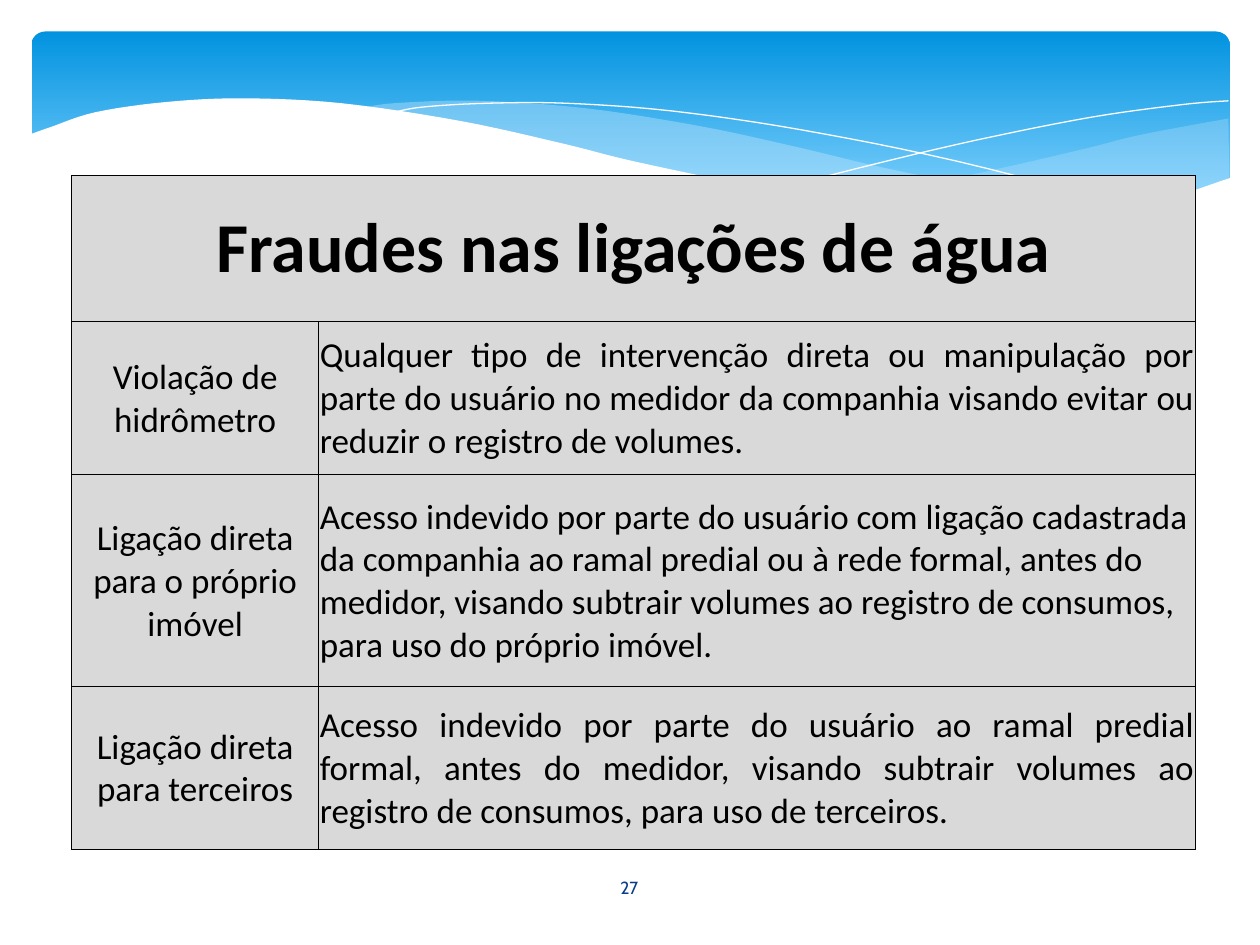
"""Build the slide on fraud in water connections."""
from dataclasses import dataclass

import pptx
import pptx.dml.color
import pptx.enum.shapes
import pptx.enum.text
import pptx.oxml
import pptx.oxml.ns
import pptx.util

Pt = pptx.util.Pt
ALIGN = pptx.enum.text.PP_ALIGN
MIDDLE = pptx.enum.text.MSO_ANCHOR.MIDDLE


@dataclass(frozen=True)
class Theme:
    """Colours, fonts and type sizes."""
    banner_top: str = "0293E0"
    banner_bottom: str = "83D3FE"
    wave: str = "C6E7FC"
    white: str = "FFFFFF"
    cell: str = "D9D9D9"
    ink: str = "000000"
    number: str = "073E87"
    body_font: str = "Calibri"
    number_font: str = "Cabin"
    title_size: int = 40
    body_size: int = 20
    number_size: int = 10


THEME = Theme()

RIGHT_WAVE = [
    [(702, 67.7), (652, 77), (620, 85), (561, 98.6), (508.5, 109.4), (476, 115.2)],
    [(476, 115.2), (537, 122), (593, 124), (641, 120), (678, 111), (702.5, 101.5)],
]
MIDDLE_WAVE = [
    [(643, 120.2), (580, 110.9), (508, 96.5), (453, 83.5), (399.5, 72),
     (334.8, 61.9), (273.6, 57.6), (225.4, 59), (206, 61.9)],
    [(206, 61.9), (246, 67.7), (306.7, 79.2), (381.6, 97.2), (444.9, 110.2),
     (500.4, 118.8), (547.9, 123.1), (589, 124.6), (624.2, 122.4), (643, 120.2)],
]
FALLING_LINE = [[(222.5, 64.8), (241.2, 61.2), (278.6, 59), (323.3, 59),
                 (383.8, 63.4), (457.9, 74.2), (547.2, 92.2), (653, 119.5)]]
RISING_LINE = [[(441.4, 108.7), (500.4, 93.6), (558.7, 79.9), (623.5, 67),
                (675.4, 59.8), (702, 57.6)]]
WHITE_WAVE = [
    [(703.4, 101.5), (662.4, 114.5), (612, 122.4), (559, 123.1), (495.4, 118.8),
     (434.2, 107.3), (362.2, 92.2), (321.8, 82.1), (262.8, 69.1), (195.1, 59),
     (139, 56.2), (95, 58.3), (54.7, 64.1), (28.8, 72.7), (16.6, 77)],
    [(16.6, 161.3), (703.4, 161.3)],
]

TITLE = "Fraudes nas ligações de água"
FRAUDS = [
    ("Violação de hidrômetro",
     "Qualquer tipo de intervenção direta ou manipulação por parte do usuário no "
     "medidor da companhia visando evitar ou reduzir o registro de volumes.",
     ALIGN.JUSTIFY),
    ("Ligação direta para o próprio imóvel",
     "Acesso indevido por parte do usuário com ligação cadastrada da companhia ao "
     "ramal predial ou à rede formal, antes do medidor, visando subtrair volumes ao "
     "registro de consumos, para uso do próprio imóvel.",
     ALIGN.LEFT),
    ("Ligação direta para terceiros",
     "Acesso indevido por parte do usuário ao ramal predial formal, antes do "
     "medidor, visando subtrair volumes ao registro de consumos, para uso de "
     "terceiros.",
     ALIGN.JUSTIFY),
]


def rgb(value):
    """Return a colour object for a hex value."""
    return pptx.dml.color.RGBColor.from_string(value)


def apply_format(target, values):
    """Set each named attribute on the target."""
    for name, value in values.items():
        setattr(target, name, value)


def smooth(knots, steps=6):
    """Return points on a Catmull-Rom curve through the knots."""
    padded = [knots[0], *knots, knots[-1]]
    points = [knots[0]]
    for a, b, c, d in zip(padded, padded[1:], padded[2:], padded[3:]):
        for step in range(1, steps + 1):
            t = step / steps
            points.append(tuple(
                q + t / 2 * (r - p + t * (2 * p - 5 * q + 4 * r - s
                                          + t * (3 * (q - r) + s - p)))
                for p, q, r, s in zip(a, b, c, d)))
    return points


def add_curve(slide, edges, fill=None, alpha=None):
    """Add a filled wave, or a white hairline when no fill is given."""
    points = [(Pt(x), Pt(y)) for edge in edges for x, y in smooth(edge)]
    builder = slide.shapes.build_freeform(*points[0], scale=1.0)
    builder.add_line_segments(points[1:], close=fill is not None)
    shape = builder.convert_to_shape()
    shape.shadow.inherit = False
    if fill is None:
        shape.fill.background()
        shape.line.color.rgb = rgb(THEME.white)
        shape.line.width = Pt(0)
        return
    shape.line.fill.background()
    shape.fill.solid()
    shape.fill.fore_color.rgb = rgb(fill)
    if alpha is not None:
        colour = shape.fill._xPr.find(".//" + pptx.oxml.ns.qn("a:srgbClr"))
        colour.append(pptx.oxml.parse_xml(
            f'<a:alpha {pptx.oxml.ns.nsdecls("a")} val="{alpha * 1000}"/>'))


def add_banner(slide):
    """Add the rounded gradient banner."""
    shape = slide.shapes.add_shape(
        pptx.enum.shapes.MSO_SHAPE.ROUNDED_RECTANGLE, Pt(18), Pt(18), Pt(684.7), Pt(112.3))
    shape.adjustments[0] = 0.07
    shape.shadow.inherit = False
    shape.line.fill.background()
    shape.fill.gradient()
    shape.fill.gradient_angle = 270
    stops = [(0, THEME.banner_top), (0.9, THEME.banner_bottom)]
    for stop, (position, colour) in zip(shape.fill.gradient_stops, stops):
        stop.position = position
        stop.color.rgb = rgb(colour)


def write_text(frame, text, alignment, colour, font_format):
    """Write one formatted paragraph."""
    paragraph = frame.paragraphs[0]
    paragraph.text = text
    paragraph.alignment = alignment
    apply_format(paragraph.font, font_format)
    paragraph.font.color.rgb = rgb(colour)


def add_page_number(slide, text):
    """Add the centred page number."""
    box = slide.shapes.add_textbox(Pt(313.9), Pt(492.5), Pt(91.4), Pt(28.8))
    apply_format(box.text_frame, {"word_wrap": True, "vertical_anchor": MIDDLE})
    write_text(box.text_frame, text, ALIGN.CENTER, THEME.number,
               {"name": THEME.number_font, "size": Pt(THEME.number_size)})


def style_cell(cell):
    """Give a cell its fill, margins and borders."""
    apply_format(cell, {
        "vertical_anchor": MIDDLE, "margin_left": Pt(0.7), "margin_right": Pt(0.7),
        "margin_top": Pt(0.7), "margin_bottom": Pt(0)})
    cell.fill.solid()
    cell.fill.fore_color.rgb = rgb(THEME.cell)
    properties = cell._tc.get_or_add_tcPr()
    for index, side in enumerate(("lnL", "lnR", "lnT", "lnB")):
        properties.insert(index, pptx.oxml.parse_xml(
            f'<a:{side} {pptx.oxml.ns.nsdecls("a")} w="{Pt(0.5)}"><a:solidFill>'
            f'<a:srgbClr val="{THEME.ink}"/></a:solidFill></a:{side}>'))


def add_fraud_table(slide):
    """Add the table of frauds under its merged title."""
    widths, heights = (141.1, 501.1), (83.5, 87.8, 121, 92.9)
    table = slide.shapes.add_table(
        len(heights), len(widths), Pt(41), Pt(100.1), Pt(sum(widths)), Pt(sum(heights))).table
    apply_format(table, {"first_row": False, "horz_banding": False})
    for column, width in zip(table.columns, widths):
        column.width = Pt(width)
    for row, height in zip(table.rows, heights):
        row.height = Pt(height)
    for cell in table.iter_cells():
        style_cell(cell)
    table.cell(0, 0).merge(table.cell(0, 1))
    body = {"name": THEME.body_font, "size": Pt(THEME.body_size), "bold": False}
    title = {**body, "size": Pt(THEME.title_size), "bold": True}
    write_text(table.cell(0, 0).text_frame, TITLE, ALIGN.CENTER, THEME.ink, title)
    for row, (name, description, alignment) in enumerate(FRAUDS, start=1):
        write_text(table.cell(row, 0).text_frame, name, ALIGN.CENTER, THEME.ink, body)
        write_text(table.cell(row, 1).text_frame, description, alignment, THEME.ink, body)


def main():
    """Build and save the presentation."""
    presentation = pptx.Presentation()
    apply_format(presentation, {"slide_width": Pt(720), "slide_height": Pt(540)})
    slide = presentation.slides.add_slide(presentation.slide_layouts[6])
    add_banner(slide)
    add_curve(slide, RIGHT_WAVE, THEME.wave, 29)
    add_curve(slide, MIDDLE_WAVE, THEME.wave, 40)
    add_curve(slide, FALLING_LINE)
    add_curve(slide, RISING_LINE)
    add_curve(slide, WHITE_WAVE, THEME.white)
    add_page_number(slide, "27")
    add_fraud_table(slide)
    presentation.save("out.pptx")


if __name__ == "__main__":
    main()
